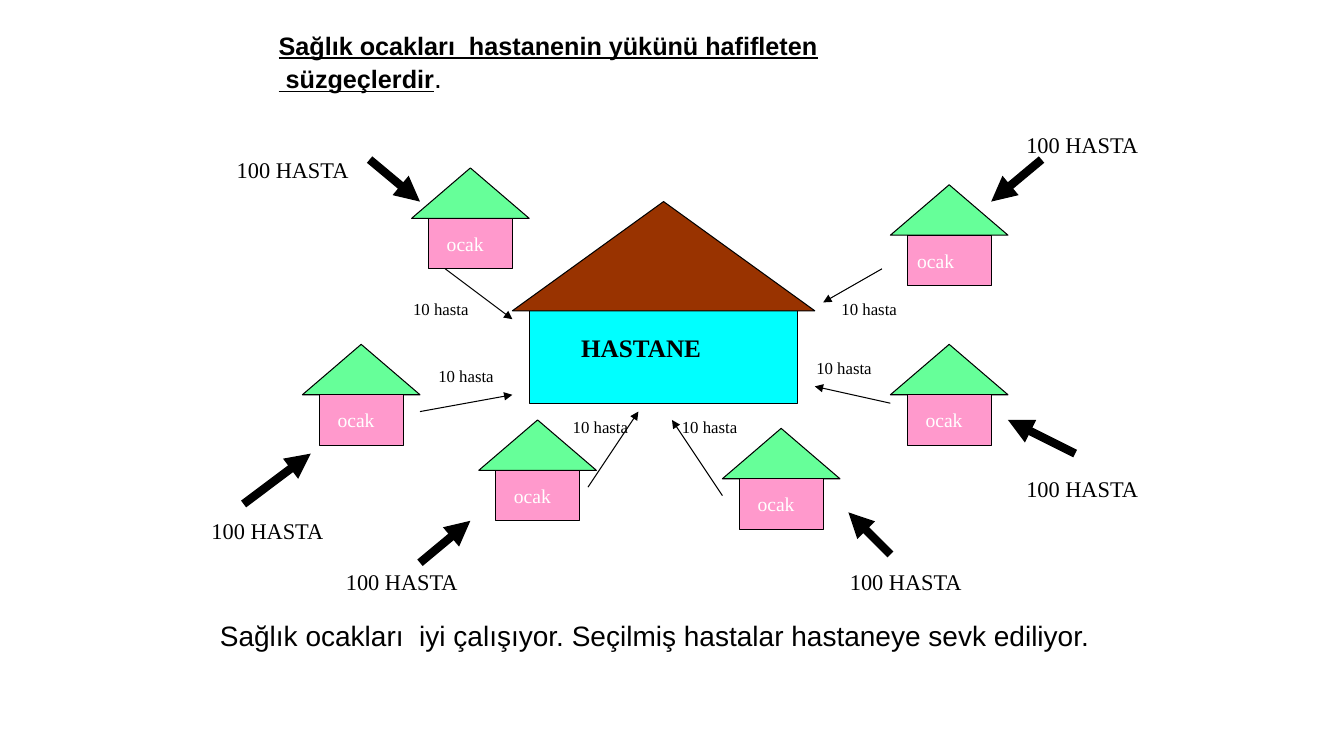
from collections import namedtuple

from lxml import etree
from pptx import Presentation
from pptx.dml.color import RGBColor
from pptx.enum.shapes import MSO_CONNECTOR, MSO_SHAPE
from pptx.oxml.ns import qn
from pptx.util import Cm, Pt

RECTANGLE = MSO_SHAPE.RECTANGLE
TRIANGLE = MSO_SHAPE.ISOSCELES_TRIANGLE
STRAIGHT = MSO_CONNECTOR.STRAIGHT

BLACK = RGBColor(0x00, 0x00, 0x00)
WHITE = RGBColor(0xFF, 0xFF, 0xFF)
CYAN = RGBColor(0x00, 0xFF, 0xFF)
BROWN = RGBColor(0x99, 0x33, 0x00)
PINK = RGBColor(0xFF, 0x99, 0xCC)
GREEN = RGBColor(0x66, 0xFF, 0x99)

SERIF = "Times New Roman"
SANS = "Arial"

# All places are counted in grid steps of a twelfth of an inch
GRID_CM = 2.54 / 12
GRID_POINTS = 6
SLIDE_SIZE = (160, 90)

# Each clinic: roof corner, label inset, arrows as (x1, y1, x2, y2),
# and the places of the labels beside the arrows
Clinic = namedtuple(
    "Clinic", "roof label_inset arrival arrival_label referral referral_label")
CLINICS = [
    Clinic((49, 20), 3, (44, 19, 50, 24), (27, 18), (53, 32, 61, 38), (48, 35)),
    Clinic((106, 22), 2, (124, 19, 118, 24), (121, 15), (105, 32, 98, 36), (99, 35)),
    Clinic((36, 41), 3, (29, 60, 37, 54), (24, 61), (50, 49, 61, 47), (51, 43)),
    Clinic((106, 41), 3, (128, 54, 120, 50), (121, 56), (106, 48, 97, 46), (96, 42)),
    Clinic((57, 50), 3, (50, 67, 56, 62), (40, 67), (70, 58, 76, 49), (67, 49)),
    Clinic((86, 51), 3, (106, 66, 101, 61), (100, 67), (86, 59, 80, 50), (80, 49)),
]


def grid(*steps):
    return [Cm(step * GRID_CM) for step in steps]


class Diagram:
    def __init__(self, slide, line_width=0.75):
        self.slide = slide
        self.line_width = line_width

    def block(self, kind, left, top, width, height, fill):
        shape = self.slide.shapes.add_shape(kind, *grid(left, top, width, height))
        shape.shadow.inherit = False
        shape.fill.solid()
        shape.fill.fore_color.rgb = fill
        shape.line.color.rgb = BLACK
        shape.line.width = Pt(self.line_width)

    def text(self, lines, left, top, width, size, font=SERIF, color=BLACK,
             bold=False, wrap=True):
        height = (len(lines) * size * 1.2 + 7.2) / GRID_POINTS
        box = self.slide.shapes.add_textbox(*grid(left, top, width, height))
        frame = box.text_frame
        frame.word_wrap = wrap
        frame.text = "\n".join(lines)
        for paragraph in frame.paragraphs:
            paragraph.font.name = font
            paragraph.font.size = Pt(size)
            paragraph.font.bold = bold
            paragraph.font.color.rgb = color
        return frame

    def arrow(self, ends, width=None):
        connector = self.slide.shapes.add_connector(STRAIGHT, *grid(*ends))
        connector.line.color.rgb = BLACK
        connector.line.width = Pt(width or self.line_width)
        outline = connector.line._get_or_add_ln()
        etree.SubElement(outline, qn("a:tailEnd"), type="triangle")
        etree.SubElement(connector._element.spPr, qn("a:effectLst"))

    def house(self, left, top):
        self.block(TRIANGLE, left, top, 14, 6, GREEN)
        self.block(RECTANGLE, left + 2, top + 6, 10, 6, PINK)

    def title(self, lines, left, top, width):
        frame = self.text(lines, left, top, width, 18, SANS, bold=True, wrap=False)
        for paragraph in frame.paragraphs:
            paragraph.runs[0].font.underline = True
        full_stop = frame.paragraphs[-1].add_run()
        full_stop.text = "."
        full_stop.font.size = Pt(20)
        full_stop.font.bold = False


def main():
    presentation = Presentation()
    presentation.slide_width, presentation.slide_height = grid(*SLIDE_SIZE)
    slide = presentation.slides.add_slide(presentation.slide_layouts[6])
    diagram = Diagram(slide)

    # Title and conclusion
    diagram.title(["Sağlık ocakları  hastanenin yükünü hafifleten", " süzgeçlerdir"],
                  32, 3, 67.2)
    diagram.text(
        ["Sağlık ocakları  iyi çalışıyor. Seçilmiş hastalar hastaneye sevk ediliyor."],
        25, 73, 109, 20, SANS)

    # Hospital
    diagram.block(RECTANGLE, 63, 37, 32, 11, CYAN)
    diagram.block(TRIANGLE, 61, 24, 36, 13, BROWN)
    diagram.text(["HASTANE"], 68, 39, 22, 18, bold=True)

    # Clinics with arriving and referred patients
    for clinic in CLINICS:
        left, top = clinic.roof
        diagram.house(left, top)
        diagram.text(["ocak"], left + clinic.label_inset, top + 7, 8, 14, color=WHITE)
        diagram.arrow(clinic.arrival, 6)
        diagram.text(["100 HASTA"], *clinic.arrival_label, 17, 16)
        diagram.arrow(clinic.referral)
        diagram.text(["10 hasta"], *clinic.referral_label, 11, 12)

    presentation.save("out.pptx")


if __name__ == "__main__":
    main()
